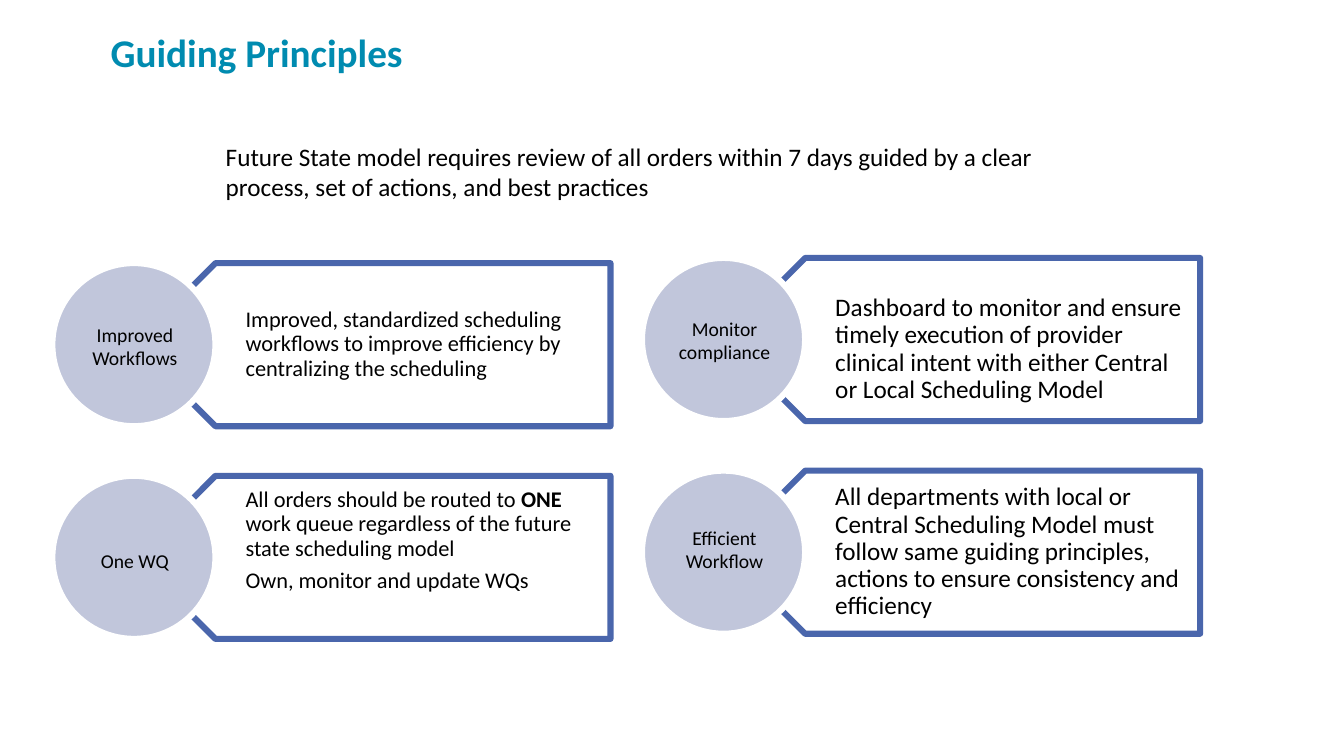
import pptx
import pptx.dml.color
import pptx.enum.shapes
import pptx.enum.text
import pptx.util

Cm = pptx.util.Cm
Pt = pptx.util.Pt
RGBColor = pptx.dml.color.RGBColor
MSO_SHAPE = pptx.enum.shapes.MSO_SHAPE
MSO_ANCHOR = pptx.enum.text.MSO_ANCHOR
PP_ALIGN = pptx.enum.text.PP_ALIGN

TEAL = RGBColor(0x00, 0x8B, 0xB0)
BLUE = RGBColor(0x4A, 0x66, 0xAC)
LAVENDER = RGBColor(0xC1, 0xC6, 0xDB)
WHITE = RGBColor(0xFF, 0xFF, 0xFF)
BLACK = RGBColor(0x00, 0x00, 0x00)

CIRCLE = 4.11
ROW_STEP = 5.36
COLUMNS = [(1.32, 6.63, 16, 0.3), (16.18, 6.5, 18, 0.36)]
CARDS = [
    (0, 0, "Improved Workflows", 0.04, 0,
     ["Improved, standardized scheduling workflows to improve efficiency by centralizing the scheduling"]),
    (0, 1, "One WQ", 0.08, -0.42,
     ["All orders should be routed to **ONE** work queue regardless of the future state scheduling model",
      "Own, monitor and update WQs"]),
    (1, 0, "Monitor compliance", 0.02, 0.25,
     ["Dashboard to monitor and ensure timely execution of provider clinical intent "
      "with either Central or Local Scheduling Model"]),
    (1, 1, "Efficient Workflow", -0.08, 0,
     ["All departments with local or Central Scheduling Model must follow same guiding principles, "
      "actions to ensure consistency and efficiency"]),
]


def format_run(r, size, color=BLACK, bold=False):
    r.font.name = "Calibri"
    r.font.size = Pt(size)
    r.font.color.rgb = color
    r.font.bold = bold


def add_text(s, left, top, width, height, text, size, color=BLACK, bold=False,
             anchor=MSO_ANCHOR.TOP):
    sp = s.shapes.add_textbox(Cm(left), Cm(top), Cm(width), Cm(height))
    tf = sp.text_frame
    tf.word_wrap = True
    tf.vertical_anchor = anchor
    tf.text = text
    format_run(tf.paragraphs[0].runs[0], size, color, bold)


def add_plain_shape(s, kind, left, top, width, height, fill=None, line=None):
    sp = s.shapes.add_shape(kind, Cm(left), Cm(top), Cm(width), Cm(height))
    sp.shadow.inherit = False
    if fill is None:
        sp.fill.background()
    else:
        sp.fill.solid()
        sp.fill.fore_color.rgb = fill
    if line is None:
        sp.line.fill.background()
    else:
        sp.line.color.rgb = line
        sp.line.width = Pt(4.33)
    return sp


def add_body(s, left, top, paragraphs, size, right_inset):
    sp = s.shapes.add_textbox(Cm(left), Cm(top), Cm(10.97), Cm(CIRCLE))
    tf = sp.text_frame
    tf.word_wrap = True
    tf.vertical_anchor = MSO_ANCHOR.MIDDLE
    tf.margin_left, tf.margin_right = Cm(1.8), Cm(right_inset)
    tf.margin_top = tf.margin_bottom = Cm(0.18)
    for i, text in enumerate(paragraphs):
        p = tf.add_paragraph() if i else tf.paragraphs[0]
        p.line_spacing = 0.9
        p.space_after = Pt(0.35 * size)
        for j, part in enumerate(text.split("**")):
            r = p.add_run()
            r.text = part
            format_run(r, size, bold=j % 2 == 1)


def add_label(s, left, top, text):
    sp = add_plain_shape(s, MSO_SHAPE.RECTANGLE, left, top, 2.92, 1.45, LAVENDER)
    tf = sp.text_frame
    tf.word_wrap = True
    tf.vertical_anchor = MSO_ANCHOR.MIDDLE
    tf.text = text
    p = tf.paragraphs[0]
    p.alignment = PP_ALIGN.CENTER
    format_run(p.runs[0], 14)


def add_card(s, column, row, label, label_shift, body_shift, paragraphs):
    left, first_top, size, right_inset = COLUMNS[column]
    top = first_top + row * ROW_STEP
    frame = add_plain_shape(s, MSO_SHAPE.PENTAGON, left + CIRCLE / 2, top, 12.01, CIRCLE, line=BLUE)
    frame.rotation = 180
    add_body(s, left + 3.07, top + body_shift, paragraphs, size, right_inset)
    add_plain_shape(s, MSO_SHAPE.OVAL, left, top, CIRCLE, CIRCLE, LAVENDER, WHITE)
    add_label(s, left + 0.62, top + 1.33 + label_shift, label)


def main():
    prs = pptx.Presentation()
    prs.slide_width, prs.slide_height = Cm(33.87), Cm(19.05)
    s = prs.slides.add_slide(prs.slide_layouts[6])
    add_text(s, 2.54, 0.38, 29.69, 1.83, "Guiding Principles", 28, TEAL, True, MSO_ANCHOR.MIDDLE)
    add_text(s, 5.44, 3.43, 22.99, 1.8,
             "Future State model requires review of all orders within 7 days guided by a clear "
             "process, set of actions, and best practices", 18)
    for card in CARDS:
        add_card(s, *card)
    prs.save("out.pptx")


if __name__ == "__main__":
    main()
